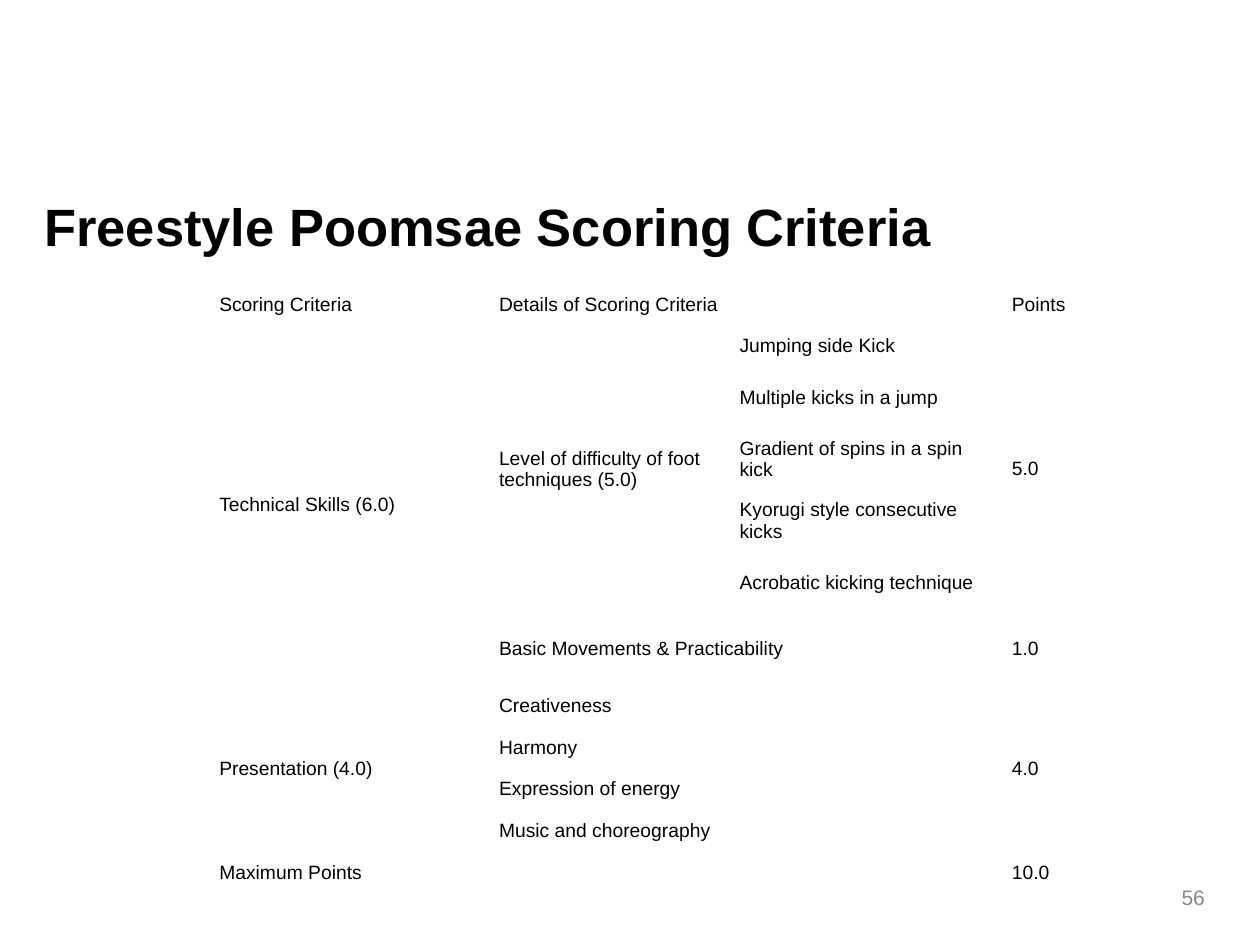
from pptx import Presentation
from pptx.dml.color import RGBColor
from pptx.enum.text import MSO_ANCHOR, MSO_AUTO_SIZE, PP_ALIGN
from pptx.util import Cm, Pt

MIDDLE = MSO_ANCHOR.MIDDLE
LEFT, RIGHT = PP_ALIGN.LEFT, PP_ALIGN.RIGHT
FIXED = MSO_AUTO_SIZE.NONE

COLORS = {"ink": "000000", "gray": "898989"}
FRAME = {"vertical_anchor": MIDDLE, "word_wrap": True, "auto_size": FIXED}
CELL = {
    "vertical_anchor": MIDDLE,
    "margin_left": Cm(0.18),
    "margin_right": Cm(0.18),
    "margin_top": 0,
    "margin_bottom": 0,
}
PLAIN = {"first_row": False, "horz_banding": False}
COLS = [5.64, 4.85, 5.49, 2.44]
ROWS = [0.84] * 2 + [1.24] * 4 + [1.45] + [0.84] * 5
KICKS = [
    "Jumping side Kick",
    "Multiple kicks in a jump",
    "Gradient of spins in a spin kick",
    "Kyorugi style consecutive kicks",
    "Acrobatic kicking technique",
]
SHOWS = ["Creativeness", "Harmony", "Expression of energy", "Music and choreography"]
CELLS = [
    (0, 0, 1, 1, "Scoring Criteria"),
    (0, 1, 1, 2, "Details of Scoring Criteria"),
    (0, 3, 1, 1, "Points"),
    (1, 0, 6, 1, "Technical Skills (6.0)"),
    (1, 1, 5, 1, "Level of difficulty of foot techniques (5.0)"),
    *((row, 2, 1, 1, kick) for row, kick in enumerate(KICKS, 1)),
    (1, 3, 5, 1, "5.0"),
    (6, 1, 1, 2, "Basic Movements & Practicability"),
    (6, 3, 1, 1, "1.0"),
    (7, 0, 4, 1, "Presentation (4.0)"),
    *((row, 1, 1, 2, show) for row, show in enumerate(SHOWS, 7)),
    (7, 3, 4, 1, "4.0"),
    (11, 0, 1, 3, "Maximum Points"),
    (11, 3, 1, 1, "10.0"),
]


def apply(item, values):
    """Set each named attribute of an item."""
    for name, value in values.items():
        setattr(item, name, value)


def write(frame, text, size, color="ink", align=LEFT, bold=False):
    """Write one formatted paragraph into a text frame."""
    para = frame.paragraphs[0]
    para.alignment = align
    run = para.add_run()
    run.text = text
    apply(run.font, {"name": "Arial", "size": Pt(size), "bold": bold})
    run.font.color.rgb = RGBColor.from_string(COLORS[color])


def add_title(slide, box, text):
    """Place and format the title placeholder."""
    title = slide.shapes.title
    apply(title, dict(zip(("left", "top", "width", "height"), box)))
    apply(title.text_frame, FRAME)
    write(title.text_frame, text, 30, bold=True)


def add_number(slide, box, text):
    """Add the page number."""
    frame = slide.shapes.add_textbox(*box).text_frame
    apply(frame, FRAME)
    write(frame, text, 12, "gray", RIGHT)


def add_scores(slide, box):
    """Add the table of scoring criteria with its merged cells."""
    table = slide.shapes.add_table(len(ROWS), len(COLS), *box).table
    apply(table, PLAIN)
    for col, width in zip(table.columns, COLS):
        col.width = Cm(width)
    for row, height in zip(table.rows, ROWS):
        row.height = Cm(height)
    for cell in table.iter_cells():
        apply(cell, CELL)
        cell.fill.background()
    for row, col, down, across, text in CELLS:
        cell = table.cell(row, col)
        if down * across > 1:
            cell.merge(table.cell(row + down - 1, col + across - 1))
        write(cell.text_frame, text, 11)


def main():
    """Build the slide and save it."""
    deck = Presentation()
    deck.slide_width, deck.slide_height = Cm(25.4), Cm(19.05)
    slide = deck.slides.add_slide(deck.slide_layouts[5])
    add_title(
        slide,
        (Cm(0.64), Cm(3.38), Cm(24.13), Cm(2.34)),
        "Freestyle Poomsae Scoring Criteria",
    )
    add_number(slide, (Cm(18.62), Cm(17.58), Cm(5.92), Cm(1.02)), "56")
    add_scores(slide, (Cm(4.24), Cm(5.72), Cm(sum(COLS)), Cm(sum(ROWS))))
    deck.save("out.pptx")


if __name__ == "__main__":
    main()
